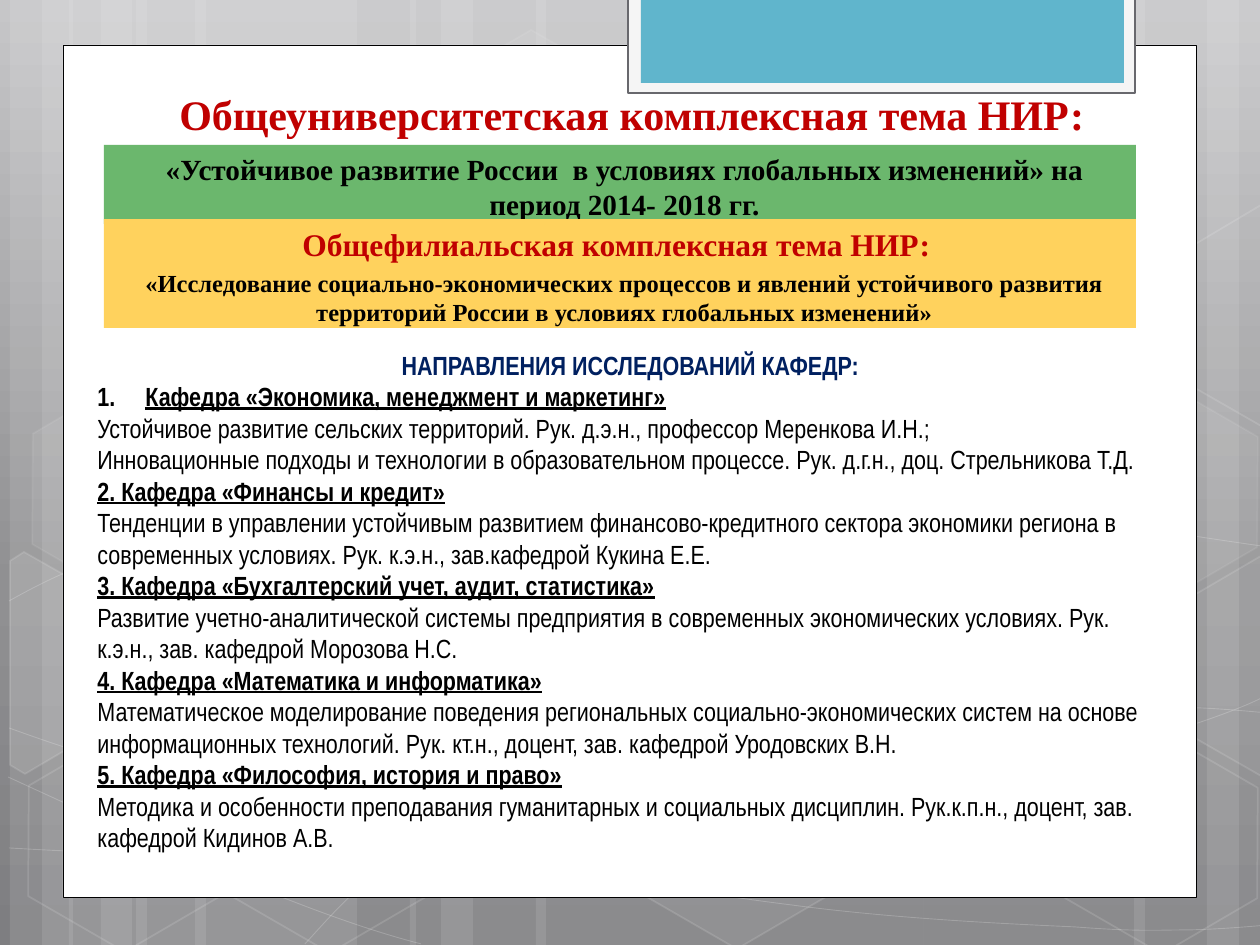
"""Build a slide on the research themes of a university and its departments."""
from copy import deepcopy
from pptx import Presentation, util as u
from pptx.dml.color import RGBColor
from pptx.enum import shapes as kinds, text as te
from pptx.oxml.ns import qn
from lxml import etree

PX = 914400 // 126
WIDE, HIGH = 1260, 945
SERIF, SANS = "Times New Roman", "Arial Narrow"
HUES = {
    "white": "FFFFFF", "black": "000000", "red": "C00000", "navy": "002060",
    "green": "6BB76D", "gold": "FFD25D", "blue": "60B5CC", "pale": "F5F5F5",
    "gray": "68686D",
}
SKY = [(0, "C6C6C8"), (62, "909092"), (100, "7E7E81")]

BANDS = [
    (136, 221), (10, 63), (42, 105), (195, 221), (69, 63), (101, 105),
    (924, 221), (1207, 63), (1134, 105), (536, 388), (410, 63), (441, 105),
]
CURVES = [
    [(9, 848), (77, 852), (145, 855), (239, 854), (334, 853), (451, 851), (577, 838),
     (703, 825), (882, 802), (998, 777), (1113, 752), (1231, 716), (1269, 694)],
    [(9, 601), (45, 581), (82, 562), (152, 543), (224, 524), (326, 496), (437, 488),
     (549, 479), (685, 478), (824, 488), (963, 498), (1193, 537), (1269, 547)],
    [(8, 777), (160, 847), (311, 916), (421, 944)],
    [(9, 728), (48, 742), (88, 756), (161, 776), (234, 795), (344, 827), (450, 848),
     (554, 869), (687, 892), (791, 905), (896, 919), (1008, 924), (1075, 927),
     (1140, 932), (1158, 930), (1191, 930), (1223, 929), (1246, 927), (1269, 925)],
    [(305, 944), (328, 919), (350, 893), (381, 871), (411, 848), (454, 823), (489, 805),
     (524, 788), (546, 780), (592, 767), (638, 755), (722, 737), (766, 728),
     (811, 719), (818, 719), (857, 717), (896, 713), (958, 709), (1000, 708),
     (1044, 707), (1116, 708), (1116, 708), (1116, 708), (1201, 708), (1201, 708),
     (1223, 709), (1245, 711), (1256, 712), (1267, 713), (1264, 712), (1268, 713)],
]
HEXES = [
    (421, 45, 4, 8), (626, 742, 6, 12), (14, 745, 0, 12), (18, 393, 7, 8),
    (219, 746, 0, 12), (949, 571, 10, 12), (1051, 747, 0, 12), (1051, 396, 7, 8),
]
EDGES = [
    (10, [(10, 561), (24, 552), (121, 607), (120, 718), (25, 774), (10, 765)]),
    (4, [(1167, 611), (1261, 556), (1271, 562), (1271, 772), (1263, 777), (1167, 722)]),
    (0, [(1167, 261), (1261, 205), (1273, 212), (1271, 422), (1263, 427), (1167, 372)]),
]
PANELS = [
    ((63, 45, 1134, 853), "white", "black", 0.5),
    ((628, -3, 507, 96), "pale", "gray", 1.25),
    ((641, -3, 483, 86), "blue", None, 0),
]

TITLE = "Общеуниверситетская комплексная тема НИР:"
THEME = "«Устойчивое развитие России  в условиях глобальных изменений» на период 2014- 2018 гг."
BRANCH = "Общефилиальская комплексная тема НИР:  "
STUDY = ("«Исследование социально-экономических процессов и явлений устойчивого "
         "развития территорий России в условиях глобальных изменений»")
HEAD = "НАПРАВЛЕНИЯ ИССЛЕДОВАНИЙ КАФЕДР:"
CHAIRS = [
    ("Кафедра «Экономика, менеджмент и маркетинг»", [
        "Устойчивое развитие сельских территорий. Рук. д.э.н., профессор Меренкова И.Н.;",
        "Инновационные подходы и технологии в образовательном процессе. "
        "Рук. д.г.н., доц. Стрельникова Т.Д."]),
    ("2. Кафедра «Финансы и кредит»", [
        "Тенденции в управлении устойчивым развитием финансово-кредитного сектора "
        "экономики региона в современных условиях. Рук. к.э.н., зав.кафедрой Кукина Е.Е."]),
    ("3. Кафедра «Бухгалтерский учет, аудит, статистика»", [
        "Развитие учетно-аналитической системы предприятия в современных экономических "
        "условиях. Рук. к.э.н., зав. кафедрой Морозова Н.С."]),
    ("4. Кафедра «Математика и информатика»", [
        "Математическое моделирование поведения региональных социально-экономических "
        "систем на основе информационных технологий. Рук. кт.н., доцент, зав. кафедрой "
        "Уродовских В.Н."]),
    ("5. Кафедра «Философия, история и право»", [
        "Методика и особенности преподавания гуманитарных и социальных дисциплин. "
        "Рук.к.п.н., доцент, зав. кафедрой Кидинов А.В."]),
]


def rgb(name):
    return RGBColor.from_string(HUES[name])


def fade(shape, where, alpha):
    for hue in shape._element.spPr.findall(f"{where}/{qn('a:srgbClr')}"):
        etree.SubElement(hue, qn("a:alpha")).set("val", str(alpha * 1000))


def paint(shape, fill=None, line=None, width=1, clear=100, faint=100):
    shape.shadow.inherit = False
    if fill:
        shape.fill.solid()
        shape.fill.fore_color.rgb = rgb(fill)
        if clear < 100:
            fade(shape, qn("a:solidFill"), clear)
    else:
        shape.fill.background()
    if line:
        shape.line.color.rgb = rgb(line)
        shape.line.width = u.Pt(width)
        if faint < 100:
            fade(shape, f"{qn('a:ln')}/{qn('a:solidFill')}", faint)
    else:
        shape.line.fill.background()


def scaled(box):
    return [n * PX for n in box]


def block(slide, box, kind=kinds.MSO_SHAPE.RECTANGLE):
    return slide.shapes.add_shape(kind, *scaled(box))


def outline(slide, dots, close):
    pen = slide.shapes.build_freeform(*dots[0], scale=PX)
    pen.add_line_segments(dots[1:], close=close)
    return pen.convert_to_shape()


def curve(slide, knots):
    shape = outline(slide, knots, False)
    route = shape._element.find(f".//{qn('a:path')}")
    legs = route.findall(qn("a:lnTo"))
    for i in range(0, len(legs), 3):
        bend = etree.SubElement(route, qn("a:cubicBezTo"))
        for leg in legs[i:i + 3]:
            bend.append(leg[0])
            route.remove(leg)
    return shape


def write(frame, words, size, font, hue="black", bold=True, under=False,
          align="LEFT", left=0, hang=0, before=0, number=False):
    para = frame.paragraphs[0] if not frame.text else frame.add_paragraph()
    para.alignment = getattr(te.PP_ALIGN, align)
    prop = para._p.get_or_add_pPr()
    prop.set("marL", str(left * PX))
    prop.set("indent", str(-hang * PX))
    gap = etree.SubElement(prop, qn("a:spcBef"))
    etree.SubElement(gap, qn("a:spcPct")).set("val", str(before * 1000))
    mark = etree.SubElement(prop, qn("a:buAutoNum" if number else "a:buNone"))
    if number:
        mark.set("type", "arabicPeriod")
    run = para.add_run()
    run.text = words
    run.font.size, run.font.name = u.Pt(size), font
    run.font.bold, run.font.underline = bold, under
    run.font.color.rgb = rgb(hue)


def setup(shape, anchor="TOP", fit="NONE"):
    frame = shape.text_frame
    frame.word_wrap = True
    frame.auto_size = getattr(te.MSO_AUTO_SIZE, fit)
    frame.vertical_anchor = getattr(te.MSO_ANCHOR, anchor)
    return frame


def backdrop(slide):
    fill = slide.background.fill
    fill.gradient()
    fill.gradient_angle = 270
    stops = slide._element.find(f".//{qn('a:gsLst')}")
    stops.append(deepcopy(stops[-1]))
    for stop, (spot, hue) in zip(fill.gradient_stops, SKY):
        stop.position, stop.color.rgb = spot / 100, RGBColor.from_string(hue)
    for left, wide in BANDS:
        paint(block(slide, (left, 0, wide, HIGH)), "white", clear=10)
    for knots in CURVES:
        paint(curve(slide, knots), None, "white", 0.5, faint=20)
    for left, top, clear, faint in HEXES:
        cell = block(slide, (left, top, 221, 192), kinds.MSO_SHAPE.HEXAGON)
        cell.adjustments[0], cell.rotation = 0.285, 30
        paint(cell, "white" if clear else None, "white", 1, clear, faint)
    for clear, dots in EDGES:
        paint(outline(slide, dots, True), "white" if clear else None, "white", 1, clear, 12)
    for box, fill, line, width in PANELS:
        paint(block(slide, box), fill, line, width)


def main():
    deck = Presentation()
    deck.slide_width, deck.slide_height = WIDE * PX, HIGH * PX
    slide = deck.slides.add_slide(deck.slide_layouts[1])
    title, body = slide.placeholders
    backdrop(slide)
    for shape, box in ((title, (116, 86, 1032, 59)), (body, (104, 145, 1032, 79))):
        shape.left, shape.top, shape.width, shape.height = scaled(box)
        slide.shapes._spTree.append(shape._element)
    write(setup(title, "BOTTOM"), TITLE, 24, SERIF, "red", align="CENTER")
    body.fill.solid()
    body.fill.fore_color.rgb = rgb("green")
    mid = {"align": "CENTER", "left": 9, "before": 20}
    write(setup(body), THEME, 16.7, SERIF, **mid)
    gold = block(slide, (104, 219, 1032, 109))
    paint(gold, "gold")
    frame = setup(gold)
    write(frame, BRANCH, 18, SERIF, "red", **mid)
    write(frame, STUDY, 14, SERIF, **mid)
    frame = setup(slide.shapes.add_textbox(*scaled((85, 343, 1091, 522))),
                  fit="SHAPE_TO_FIT_TEXT")
    write(frame, HEAD, 15, SANS, "navy", align="CENTER")
    for i, (chair, works) in enumerate(CHAIRS):
        dent = 0 if i else 48
        write(frame, chair, 15, SANS, under=True, left=dent, hang=dent, number=not i)
        for work in works:
            write(frame, work, 15, SANS, bold=False)
    deck.save("out.pptx")


if __name__ == "__main__":
    main()
